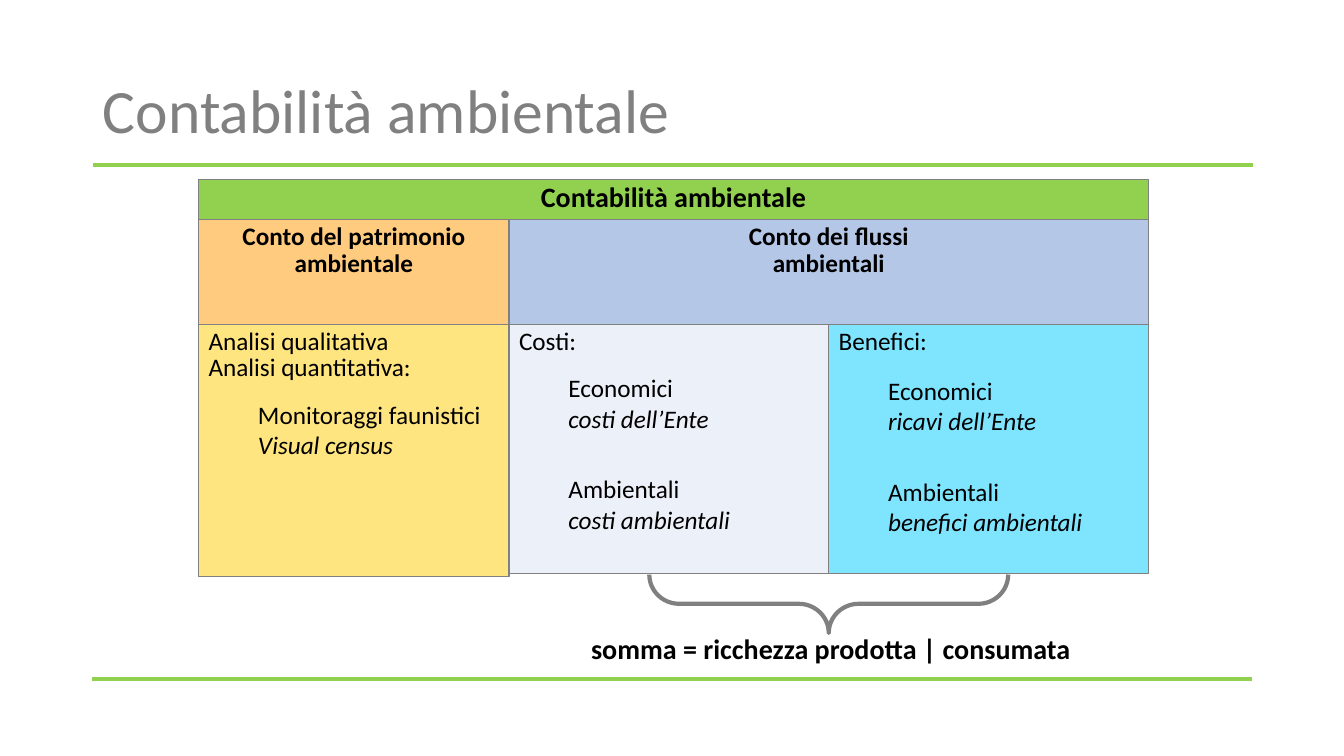
"""Build the environmental accounting slide: a chart of accounts with a summing brace."""
from dataclasses import dataclass

from lxml import etree
from pptx import Presentation, util as u
from pptx.dml.color import RGBColor
from pptx.enum import shapes, text
from pptx.oxml import ns

PX = 9144
FONT = "Calibri"
COLORS = {
    "green": "92D050", "grey": "808080", "black": "000000", "orange": "FF9900",
    "blue": "B4C7E7", "yellow": "FFCC00", "pale": "DAE3F3", "cyan": "00CCFF",
}
LEFT, MIDDLE, RIGHT = 197, 505, 1139
BENEFITS = (MIDDLE + RIGHT) // 2
HEADING_TOP, ACCOUNT_TOP, DETAIL_TOP = 178, 218, 322
INDENT = 49


@dataclass(frozen=True)
class Line:
    words: str
    size: int = 18
    bold: bool = False
    italic: bool = False
    centered: bool = False
    indent: int = 0
    before: int = 0
    spacing: float = 1.0


@dataclass(frozen=True)
class Account:
    left: int
    top: int
    right: int
    bottom: int
    color: str
    lines: tuple[Line, ...]
    opacity: int = 100


def heading(words: str, size: int = 18) -> Line:
    """Return a bold, centred line."""
    return Line(words, size, bold=True, centered=True, spacing=0.87)


def entry(name: str, detail: str, before: int) -> tuple[Line, Line]:
    """Return an indented name followed by its detail in italics."""
    return (Line(name, indent=INDENT, before=before),
            Line(detail, italic=True, indent=INDENT))


ACCOUNTS = (
    Account(LEFT, HEADING_TOP, RIGHT, ACCOUNT_TOP, "green",
            (heading("Contabilità ambientale", 20),)),
    Account(LEFT, ACCOUNT_TOP, MIDDLE, DETAIL_TOP, "orange",
            (heading("Conto del patrimonio ambientale"),), 50),
    Account(MIDDLE, ACCOUNT_TOP, RIGHT, DETAIL_TOP, "blue",
            (heading("Conto dei flussi\vambientali"),)),
    Account(LEFT, DETAIL_TOP, MIDDLE, 572, "yellow",
            (Line("Analisi qualitativa\vAnalisi quantitativa:", spacing=0.87),
             *entry("Monitoraggi faunistici", "Visual census", 12)), 50),
    Account(MIDDLE, DETAIL_TOP, BENEFITS, 569, "pale",
            (Line("Costi:", spacing=0.87),
             *entry("Economici", "costi dell’Ente", 12),
             *entry("Ambientali", "costi ambientali", 29)), 50),
    Account(BENEFITS, DETAIL_TOP, RIGHT, 569, "cyan",
            (Line("Benefici:", spacing=0.87),
             *entry("Economici", "ricavi dell’Ente", 14),
             *entry("Ambientali", "benefici ambientali", 29)), 50),
)


def rgb(name: str) -> RGBColor:
    """Look up a named colour."""
    return RGBColor.from_string(COLORS[name])


def px(*lengths: int) -> list[u.Emu]:
    """Turn pixel lengths into EMU."""
    return [u.Emu(length * PX) for length in lengths]


def write(frame, lines: tuple[Line, ...]) -> None:
    """Fill a text frame with formatted lines."""
    frame.word_wrap = True
    frame.vertical_anchor = text.MSO_ANCHOR.TOP
    for number, line in enumerate(lines):
        paragraph = frame.add_paragraph() if number else frame.paragraphs[0]
        paragraph.text = line.words
        paragraph.alignment = text.PP_ALIGN.CENTER if line.centered else text.PP_ALIGN.LEFT
        paragraph.line_spacing = line.spacing
        paragraph.space_before = u.Pt(line.before)
        if line.indent:
            paragraph._p.get_or_add_pPr().set("marL", str(line.indent * PX))
        font = paragraph.font
        font.name, font.size = FONT, u.Pt(line.size)
        font.bold, font.italic = line.bold, line.italic
        font.color.rgb = rgb("black")


def outline(item, color: str, points: int) -> None:
    """Set the line colour and width of a shape or connector."""
    item.line.color.rgb = rgb(color)
    item.line.width = u.Pt(points)


def draw_rule(slide, left: int, top: int) -> None:
    """Draw a horizontal green rule."""
    rule = slide.shapes.add_connector(
        shapes.MSO_CONNECTOR.STRAIGHT, *px(left, top, left + 1151, top))
    outline(rule, "green", 3)
    etree.SubElement(rule._element.spPr, ns.qn("a:effectLst"))


def draw_account(slide, account: Account) -> None:
    """Draw one filled account box with its text."""
    box = slide.shapes.add_shape(
        shapes.MSO_SHAPE.RECTANGLE,
        *px(account.left, account.top,
            account.right - account.left, account.bottom - account.top))
    box.shadow.inherit = False
    box.fill.solid()
    box.fill.fore_color.rgb = rgb(account.color)
    if account.opacity < 100:
        tint = box._element.spPr.find(ns.qn("a:solidFill"))[0]
        etree.SubElement(tint, ns.qn("a:alpha"), val=str(account.opacity * 1000))
    outline(box, "grey", 1)
    write(box.text_frame, account.lines)


def draw_title(slide) -> None:
    """Place and format the slide title."""
    title = slide.shapes.title
    title.left, title.top, title.width, title.height = px(92, 40, 1150, 145)
    frame = title.text_frame
    frame.word_wrap = True
    frame.auto_size = text.MSO_AUTO_SIZE.NONE
    frame.vertical_anchor = text.MSO_ANCHOR.MIDDLE
    paragraph = frame.paragraphs[0]
    paragraph.text = "Contabilità ambientale"
    paragraph.alignment = text.PP_ALIGN.LEFT
    paragraph.line_spacing = 0.9
    paragraph.font.name, paragraph.font.size = FONT, u.Pt(44)
    paragraph.font.color.rgb = rgb("grey")


def draw_sum(slide) -> None:
    """Draw the brace below the flows and the caption of their sum."""
    brace = slide.shapes.add_shape(shapes.MSO_SHAPE.LEFT_BRACE, *px(793, 421, 58, 356))
    brace.rotation = 270
    brace.adjustments[0], brace.adjustments[1] = 0.51, 0.5
    brace.shadow.inherit = False
    brace.fill.background()
    outline(brace, "grey", 3)
    caption = slide.shapes.add_textbox(*px(452, 626, 744, 39))
    write(caption.text_frame, (heading("somma = ricchezza prodotta | consumata", 20),))


def main() -> None:
    """Build and save the presentation."""
    deck = Presentation()
    deck.slide_width, deck.slide_height = px(1333, 750)
    slide = deck.slides.add_slide(deck.slide_layouts[5])
    draw_title(slide)
    for left, top in ((92, 164), (91, 674)):
        draw_rule(slide, left, top)
    draw_sum(slide)
    for account in ACCOUNTS:
        draw_account(slide, account)
    deck.save("out.pptx")


if __name__ == "__main__":
    main()
